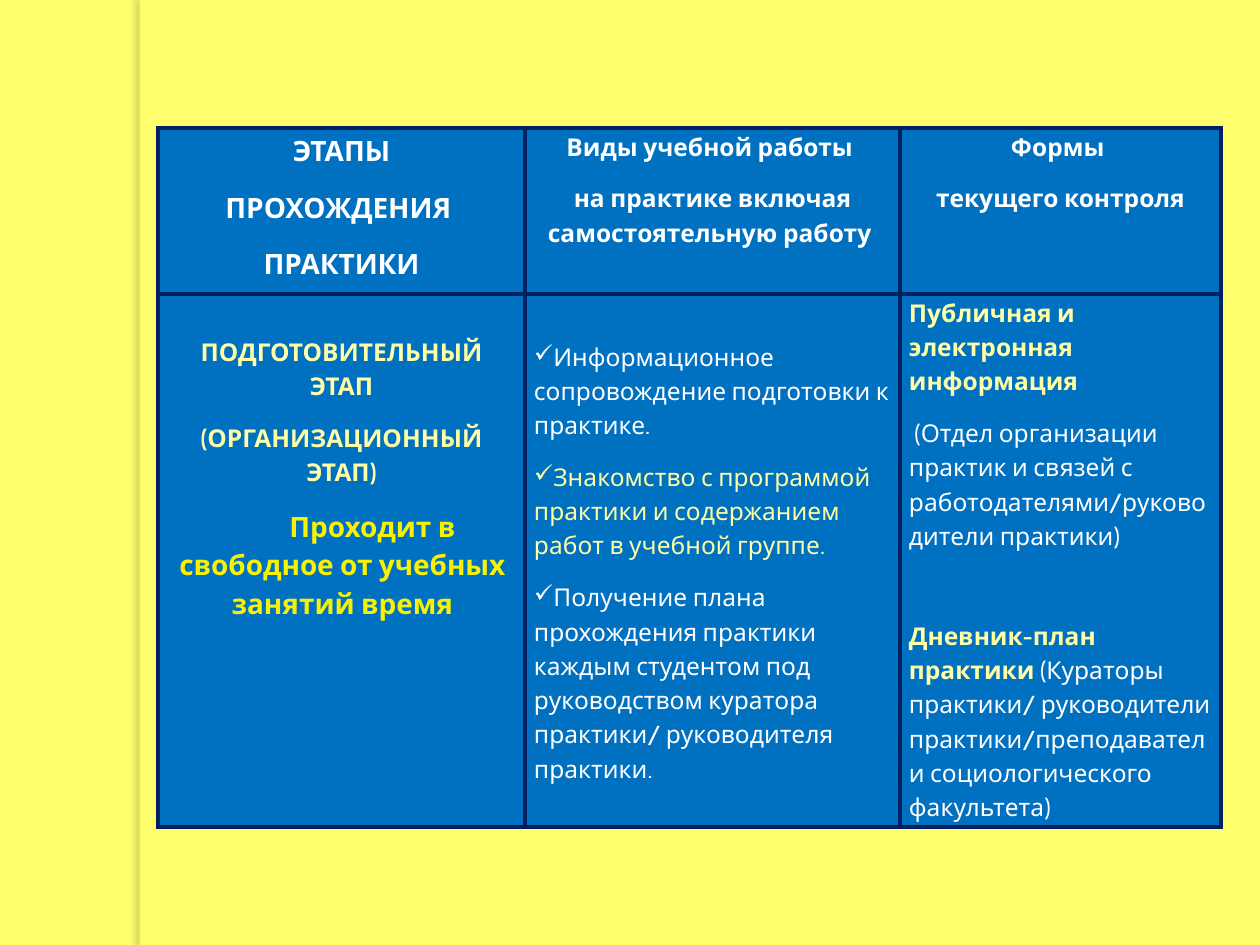
from dataclasses import dataclass
from typing import Optional

from lxml import etree
from pptx import Presentation
from pptx import util as u
from pptx.dml.color import RGBColor
from pptx.enum import shapes, text
from pptx.oxml import ns

PX = 914400 / 126  # EMU in one px
FONT = "Cabin"
PALE = RGBColor(0xFF, 0xFF, 0x6D)
BLUE = RGBColor(0x00, 0x70, 0xC0)
NAVY = RGBColor(0x00, 0x20, 0x60)
WHITE = RGBColor(0xFF, 0xFF, 0xFF)
CREAM = RGBColor(0xFF, 0xFF, 0xA7)
YELLOW = RGBColor(0xF8, 0xF2, 0x00)
SHADOW = RGBColor(0x81, 0x7B, 0x4C)
CENTER = text.PP_ALIGN.CENTER
LEFT = text.PP_ALIGN.LEFT


@dataclass
class Span:
    words: str
    color: RGBColor = WHITE
    bold: bool = False
    size: int = 14


@dataclass
class Para:
    spans: list[Span]
    align: text.PP_ALIGN = LEFT
    bullet: Optional[str] = None
    before: float = 0
    margin: int = 0
    indent: int = 0


@dataclass
class Cell:
    paras: list[Para]
    top: int = 0
    side: int = 9


def px(value: int) -> u.Emu:
    return u.Emu(round(value * PX))


def add(parent, tag: str, **attributes):
    return etree.SubElement(parent, ns.qn(tag), attributes)


def heading(words: str, size: int = 14, color: RGBColor = WHITE, **layout) -> Para:
    return Para([Span(words, color, True, size)], CENTER, **layout)


def task(words: str, color: RGBColor = WHITE) -> Para:
    return Para([Span(words, color)], bullet="✓")


def draw_border(cell) -> None:
    properties = cell._tc.get_or_add_tcPr()
    for place, side in enumerate(("a:lnL", "a:lnR", "a:lnT", "a:lnB")):
        line = add(properties, side, w=str(u.Pt(2.25)))
        add(add(line, "a:solidFill"), "a:srgbClr", val=str(NAVY))
        properties.insert(place, line)


def write_para(para, content: Para) -> None:
    layout = {"alignment": content.align, "line_spacing": 1.15,
              "space_before": u.Pt(content.before), "space_after": u.Pt(10)}
    for name, value in layout.items():
        setattr(para, name, value)
    properties = para._p.get_or_add_pPr()
    properties.set("marL", str(px(content.margin)))
    properties.set("indent", str(px(content.indent)))
    if content.bullet:
        add(properties, "a:buChar", char=content.bullet)
    for span in content.spans:
        run = para.add_run()
        run.text = span.words
        look = {"name": FONT, "size": u.Pt(span.size), "bold": span.bold}
        for name, value in look.items():
            setattr(run.font, name, value)
        run.font.color.rgb = span.color


def write_cell(cell, content: Cell) -> None:
    margins = {"margin_left": content.side, "margin_right": content.side,
               "margin_top": content.top, "margin_bottom": 0}
    for name, value in margins.items():
        setattr(cell, name, px(value))
    cell.fill.solid()
    cell.fill.fore_color.rgb = BLUE
    draw_border(cell)
    frame = cell.text_frame
    for number, para in enumerate(content.paras):
        write_para(frame.add_paragraph() if number else frame.paragraphs[0], para)


def draw_strip(page) -> None:
    strip = page.shapes.add_shape(
        shapes.MSO_SHAPE.RECTANGLE, px(140), px(0), px(10), px(945))
    strip.fill.solid()
    strip.fill.fore_color.rgb = PALE
    strip.line.fill.background()
    effects = add(strip._element.spPr, "a:effectLst")
    shadow = add(effects, "a:outerShdw", blurRad=str(u.Pt(3)), dist=str(u.Pt(3)),
                 dir="10800000", algn="ctr", rotWithShape="0")
    color = add(shadow, "a:srgbClr", val=str(SHADOW))
    add(color, "a:alpha", val="25000")


def draw_table(page, columns: list[int], heights: list[int],
               rows: list[list[Cell]]) -> None:
    frame = page.shapes.add_table(len(heights), len(columns), px(158), px(128),
                                  px(sum(columns)), px(sum(heights)))
    table = frame.table
    table.first_row = table.horz_banding = False
    for column, width in zip(table.columns, columns):
        column.width = px(width)
    for row, height, contents in zip(table.rows, heights, rows):
        row.height = px(height)
        for cell, content in zip(row.cells, contents):
            write_cell(cell, content)


HEADER = [
    Cell([heading("ЭТАПЫ", 16), heading("ПРОХОЖДЕНИЯ ", 16),
          heading("ПРАКТИКИ", 16)], top=2, side=1),
    Cell([heading("Виды учебной работы "),
          heading("на практике включая самостоятельную работу ")]),
    Cell([heading("Формы "), heading("текущего контроля")]),
]

STAGE = [
    Cell([
        heading("ПОДГОТОВИТЕЛЬНЫЙ ЭТАП", color=CREAM),
        heading("(ОРГАНИЗАЦИОННЫЙ ЭТАП)", color=CREAM),
        heading("Проходит в свободное от учебных занятий время", 16, YELLOW,
                margin=2, indent=60),
    ], top=39),
    Cell([
        task("Информационное сопровождение подготовки к практике."),
        task("Знакомство с программой практики и содержанием работ "
             "в учебной группе.", CREAM),
        task("Получение плана прохождения практики каждым студентом под "
             "руководством куратора практики/ руководителя практики."),
    ], top=44),
    Cell([
        Para([Span("Публичная и электронная информация", CREAM, True)]),
        Para([Span(" (Отдел организации практик и связей с "
                   "работодателями/руководители практики)")]),
        Para([Span("Дневник-план практики ", CREAM, True),
              Span("(Кураторы практики/ руководители практики/преподаватели "
                   "социологического факультета)")], before=27.5),
    ]),
]


def main() -> None:
    deck = Presentation()
    deck.slide_width, deck.slide_height = px(1260), px(945)
    page = deck.slides.add_slide(deck.slide_layouts[6])

    # Background and side strip
    page.background.fill.solid()
    page.background.fill.fore_color.rgb = PALE
    draw_strip(page)

    # Stages of the practice
    draw_table(page, [367, 375, 321], [166, 533], [HEADER, STAGE])
    deck.save("out.pptx")


if __name__ == "__main__":
    main()
